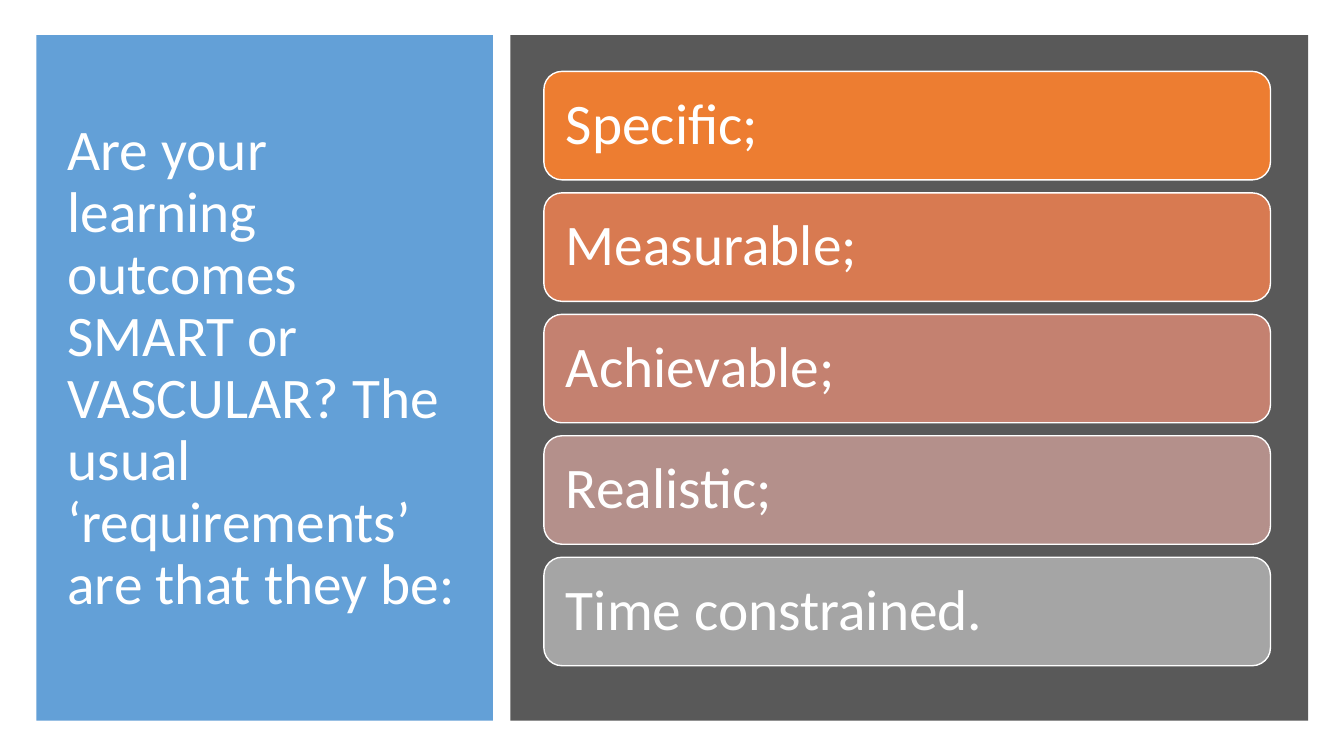
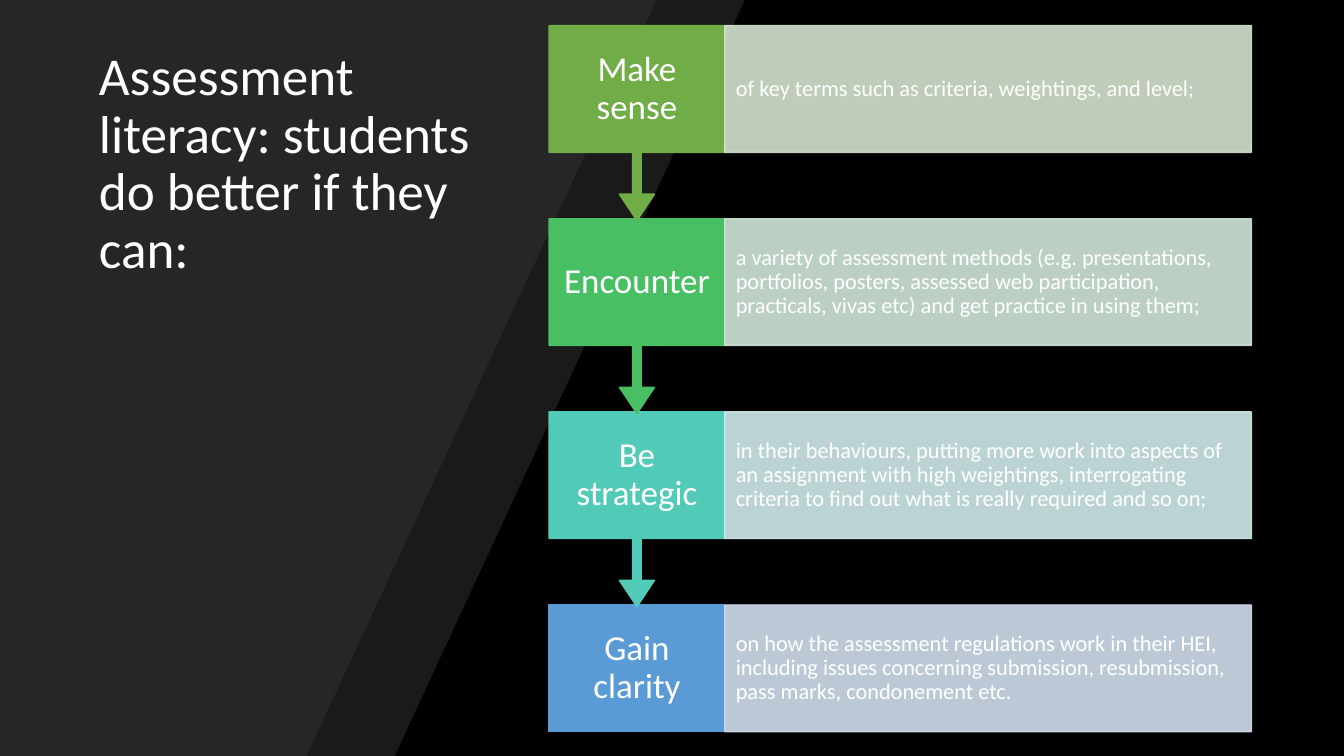
from pptx import Presentation
from pptx.dml.color import RGBColor
from pptx.enum.shapes import MSO_SHAPE
from pptx.enum.text import MSO_ANCHOR, MSO_AUTO_SIZE, PP_ALIGN
from pptx.oxml.ns import qn
from pptx.util import Pt
from lxml.etree import SubElement

FONT = "Calibri"
WHITE, BLACK, BLUE, SLATE, DARK = "FFFFFF", "000000", "5B9BD5", "595959", "262626"
WIDE, HIGH = 960, 540

GOALS = [
    ("Specific;", "ED7D31"),
    ("Measurable;", "D87A51"),
    ("Achievable;", "C48170"),
    ("Realistic;", "B4908B"),
    ("Time constrained.", "A5A5A5"),
]
STEPS = [
    ("Make sense", "70AD47", "D5E3CF",
     "of key terms such as criteria, weightings, and level;"),
    ("Encounter", "49BF64", "D0E7D8",
     "a variety of assessment methods (e.g. presentations, portfolios, posters, "
     "assessed web participation, practicals, vivas etc) and get practice in using them;"),
    ("Be strategic", "52CAB8", "D0ECEA",
     "in their behaviours, putting more work into aspects of an assignment with high "
     "weightings, interrogating criteria to find out what is really required and so on;"),
    ("Gain clarity", BLUE, "D2DEEF",
     "on how the assessment regulations work in their HEI, including issues concerning "
     "submission, resubmission, pass marks, condonement etc."),
]


def tint(code):
    return RGBColor.from_string(code)


def paint(shape, fill, line=None, alpha=100):
    """Fill and outline a shape, with an opacity in percent."""
    shape.shadow.inherit = False
    shape.fill.solid()
    shape.fill.fore_color.rgb = tint(fill)
    if line:
        shape.line.color.rgb = tint(line)
        shape.line.width = Pt(1)
    else:
        shape.line.fill.background()
    if alpha < 100:
        for color in shape.element.iter(qn("a:srgbClr")):
            SubElement(color, qn("a:alpha"), val=str(alpha * 1000))


def block(page, kind, box, fill, line=None, alpha=100):
    shape = page.shapes.add_shape(kind, *map(Pt, box))
    paint(shape, fill, line, alpha)
    return shape


def write(shape, text, size, pad, align=PP_ALIGN.LEFT, anchor=MSO_ANCHOR.MIDDLE):
    """Set white text with pad = (side, top and bottom)."""
    frame = shape.text_frame
    frame.word_wrap = True
    frame.auto_size = MSO_AUTO_SIZE.NONE
    frame.vertical_anchor = anchor
    frame.margin_left = frame.margin_right = Pt(pad[0])
    frame.margin_top = frame.margin_bottom = Pt(pad[1])
    frame.text = text
    para = frame.paragraphs[0]
    para.alignment = align
    para.line_spacing = 0.9
    para.font.name = FONT
    para.font.size = Pt(size)
    para.font.color.rgb = tint(WHITE)


def head(page, box, text, size, anchor):
    """Place the title above the panels drawn so far."""
    title = page.shapes.title
    title.left, title.top, title.width, title.height = map(Pt, box)
    write(title, text, size, (7.2, 3.6), anchor=anchor)
    title.element.getparent().append(title.element)


def start(deck, back):
    page = deck.slides.add_slide(deck.slide_layouts[5])
    page.background.fill.solid()
    page.background.fill.fore_color.rgb = tint(back)
    return page


def slope(page, top, foot, alpha=100):
    """Draw a left panel whose right edge slants from top to foot."""
    pen = page.shapes.build_freeform(0, 0, scale=Pt(1))
    pen.add_line_segments([(top, 0), (foot, HIGH), (0, HIGH)], close=True)
    paint(pen.convert_to_shape(), DARK, alpha=alpha)


def bars(page, box):
    """Stack the goals evenly in the box."""
    left, top, width, height = box
    gap = 9.3
    tall = (height - gap * (len(GOALS) - 1)) / len(GOALS)
    for i, (text, fill) in enumerate(GOALS):
        spot = (left, top + i * (tall + gap), width, tall)
        bar = block(page, MSO_SHAPE.ROUNDED_RECTANGLE, spot, fill, WHITE)
        write(bar, text, 41, (12, 12))


def flow(page, box):
    """Chain the steps down the box, each arrow ending on the next step."""
    left, top, width, height = box
    tall, reach = 90.5, 139.2
    pitch = (height - tall) / (len(STEPS) - 1)
    side = width / 4
    last = len(STEPS) - 1
    for i, (name, fill, pale, text) in reversed(list(enumerate(STEPS))):
        y = top + i * pitch
        if i == last:
            step = block(page, MSO_SHAPE.RECTANGLE, (left, y, side, tall), fill, fill)
        else:
            step = block(page, MSO_SHAPE.DOWN_ARROW_CALLOUT,
                         (left, y, side, reach), fill, fill)
            for k, value in enumerate((0.05, 0.1, 0.15, 0.65)):
                step.adjustments[k] = value
        write(step, name, 25, (8.9, 13.5), PP_ALIGN.CENTER)
        note = block(page, MSO_SHAPE.RECTANGLE,
                     (left + side, y, width - side, tall), pale, pale, 90)
        write(note, text, 16, (7.9, 15.8))


def goals(deck):
    page = start(deck, WHITE)
    block(page, MSO_SHAPE.RECTANGLE, (26, 25.2, 326, 489.6), BLUE, alpha=95)
    block(page, MSO_SHAPE.RECTANGLE, (364.5, 25.2, 570, 489.6), SLATE)
    head(page, (41, 46, 293, 435),
         "Are your learning outcomes SMART or VASCULAR? "
         "The usual ‘requirements’ are that they be:", 41, MSO_ANCHOR.MIDDLE)
    bars(page, (388.5, 51, 519, 424.5))


def skills(deck):
    page = start(deck, BLACK)
    slope(page, 532, 281.5, 70)
    slope(page, 469, 219)
    head(page, (63.5, 26.5, 305.5, 177),
         "Assessment literacy: students do better if they can:", 38, MSO_ANCHOR.BOTTOM)
    flow(page, (392.3, 18.3, 501.6, 504.3))


def main():
    deck = Presentation()
    deck.slide_width, deck.slide_height = Pt(WIDE), Pt(HIGH)
    goals(deck)
    skills(deck)
    deck.save("out.pptx")


if __name__ == "__main__":
    main()
